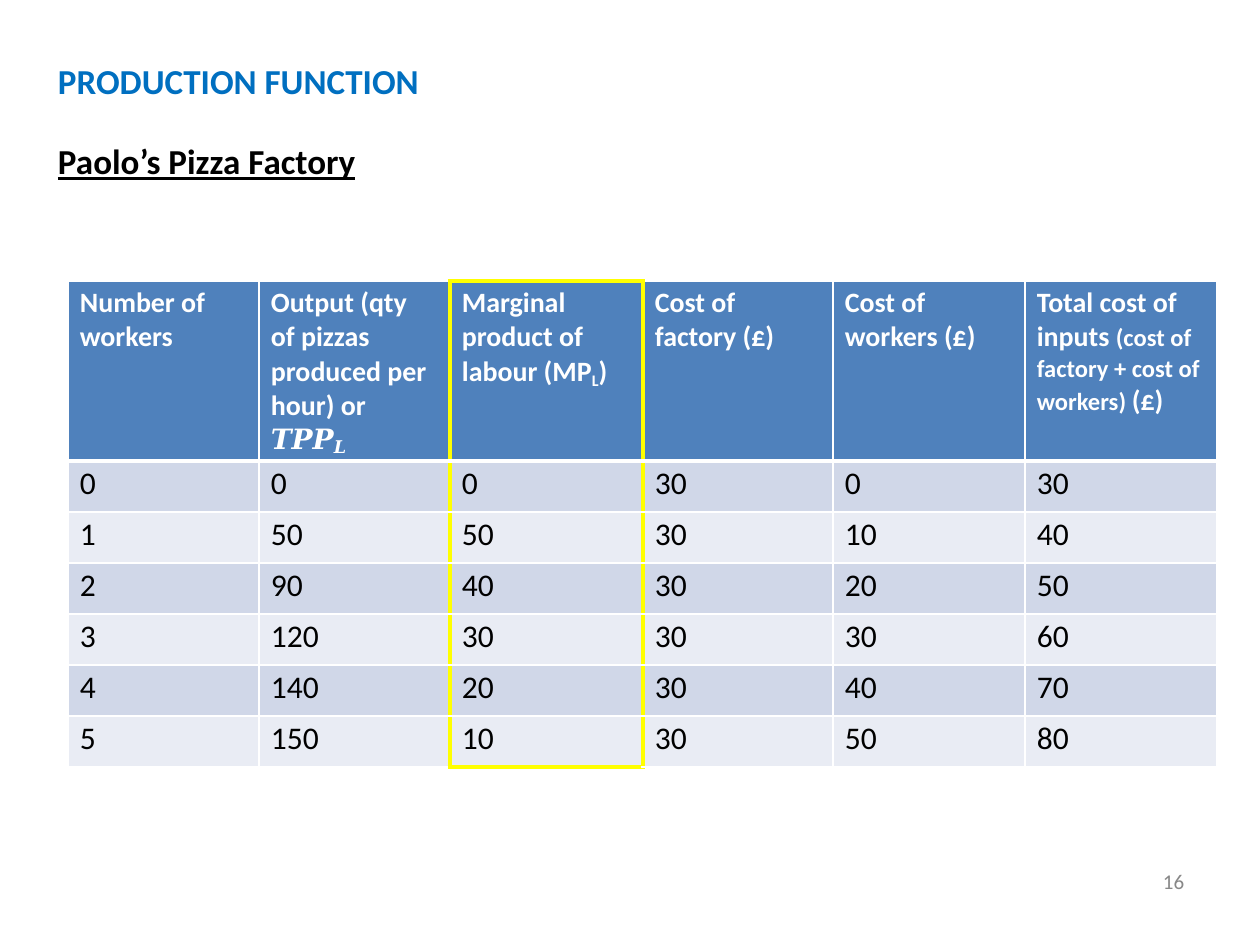
"""Build the production function slide with its table of workers, output and costs."""
from dataclasses import dataclass

from lxml.etree import SubElement as Sub
from pptx import Presentation as Deck
from pptx.dml.color import RGBColor as Rgb
from pptx.enum.text import MSO_ANCHOR as Anchor, MSO_AUTO_SIZE as Auto, PP_ALIGN as Align
from pptx.oxml.ns import qn
from pptx.util import Emu, Pt

HUES = {
    "blue": "006FC0", "black": "000000", "grey": "888888", "white": "FFFFFF",
    "head": "4F81BC", "dark": "D0D7E8", "light": "E9ECF4", "mark": "FFFF00",
}
SANS, SERIF = "Calibri", "Times New Roman"
COLS = [191, 191, 193, 190, 192, 192]
HEAD, ROW = 180, 51
KEY = 2


@dataclass
class Piece:
    text: str
    size: float | None = None
    drop: int = 0


@dataclass
class Line:
    bits: list[Piece]
    size: float
    hue: str
    bold: bool = False
    face: str = SANS
    under: bool = False
    gap: float = 0


def px(num: int) -> Emu:
    return Emu(round(num * 914400 / 126))


def rgb(name: str) -> Rgb:
    return Rgb.from_string(HUES[name])


def write(frame, lines: list[Line]) -> None:
    for i, line in enumerate(lines):
        para = frame.add_paragraph() if i else frame.paragraphs[0]
        para.alignment = Align.LEFT
        para.space_before = Pt(line.gap)
        font = para.font
        font.name, font.size, font.bold = line.face, Pt(line.size), line.bold
        font.underline = line.under
        font.color.rgb = rgb(line.hue)
        for bit in line.bits:
            run = para.add_run()
            run.text = bit.text
            if bit.size:
                run.font.size = Pt(bit.size)
            if bit.drop:
                run.font._element.set("baseline", str(-1000 * bit.drop))


def inset(frame, left: int, top: int) -> None:
    frame.margin_left, frame.margin_top = px(left), px(top)
    frame.margin_right = frame.margin_bottom = 0
    frame.vertical_anchor = Anchor.TOP
    frame.word_wrap = True


def place(shape, left: int, top: int, width: int, height: int) -> None:
    shape.left, shape.top = px(left), px(top)
    shape.width, shape.height = px(width), px(height)


def edge(props, side: str, hue: str, width: int) -> None:
    line = Sub(props, qn(f"a:ln{side}"), w=str(Pt(width)))
    Sub(Sub(line, qn("a:solidFill")), qn("a:srgbClr"), val=HUES[hue])


def border(cell, row: int, col: int, last: int) -> None:
    thin, thick, mark = ("white", 1), ("white", 3), ("mark", 3)
    key = col == KEY
    sides = {
        "L": mark if col in (KEY, KEY + 1) else thin,
        "R": mark if col in (KEY - 1, KEY) else thin,
        "T": mark if key and row == 0 else thick if row == 1 else thin,
        "B": mark if key and row == last else thick if row == 0 else thin,
    }
    props = cell._tc.get_or_add_tcPr()
    for side, (hue, width) in sides.items():
        edge(props, side, hue, width)


def head(*bits: str | Piece) -> Line:
    runs = [Piece(bit) if isinstance(bit, str) else bit for bit in bits]
    return Line(runs, 16, "white", True)


def grid(slide, rows: list[list[list[Line]]], left: int, top: int) -> None:
    last = len(rows) - 1
    table = slide.shapes.add_table(
        len(rows), len(COLS), px(left), px(top), px(sum(COLS)), px(HEAD + last * ROW)
    ).table
    table.first_row = table.horz_banding = False
    for col, width in enumerate(COLS):
        table.columns[col].width = px(width)
    for i, row in enumerate(rows):
        table.rows[i].height = px(ROW if i else HEAD)
        hue = "head" if i == 0 else "dark" if i % 2 else "light"
        for col, lines in enumerate(row):
            cell = table.cell(i, col)
            border(cell, i, col, last)
            cell.fill.solid()
            cell.fill.fore_color.rgb = rgb(hue)
            cell.margin_left, cell.margin_top = px(12), px(4 if i else 5)
            cell.margin_right, cell.margin_bottom = px(22 if col == 1 else 10), 0
            write(cell.text_frame, lines)


def main() -> None:
    deck = Deck()
    deck.slide_width, deck.slide_height = px(1260), px(945)
    slide = deck.slides.add_slide(deck.slide_layouts[5])

    title = slide.shapes.title
    place(title, 57, 58, 370, 126)
    inset(title.text_frame, 1, 1)
    title.text_frame.auto_size = Auto.NONE
    write(title.text_frame, [
        Line([Piece("PRODUCTION FUNCTION")], 20, "blue", True),
        Line([Piece("Paolo’s Pizza Factory")], 20, "black", True, under=True, gap=22.1),
    ])

    total = Piece("(cost of factory + cost of workers) ", 14)
    maths = [Piece("𝑻𝑷𝑷"), Piece("𝑳", 17.2, 14)]
    heads = [
        [head("Number of"), head("workers")],
        [head("Output (qty of pizzas produced per hour) or"),
         Line(maths, 16, "white", face=SERIF)],
        [head("Marginal product of labour (MP", Piece("L", 15.8, 21), ")")],
        [head("Cost of"), head("factory (£)")],
        [head("Cost of"), head("workers (£)")],
        [head("Total cost of inputs ", total, "(£)")],
    ]
    cost, wage = 30, 10
    output = [0, 50, 90, 120, 140, 150]
    rows = [heads]
    for count, made in enumerate(output):
        extra = made - output[count - 1] if count else 0
        pay = count * wage
        nums = [count, made, extra, cost, pay, cost + pay]
        rows.append([[Line([Piece(str(num))], 18, "black")] for num in nums])
    grid(slide, rows, 68, 281)

    page = slide.shapes.add_textbox(px(1158), px(838), px(40), px(77))
    inset(page.text_frame, 5, 35)
    write(page.text_frame, [Line([Piece("16")], 12, "grey")])
    deck.save("out.pptx")


if __name__ == "__main__":
    main()
